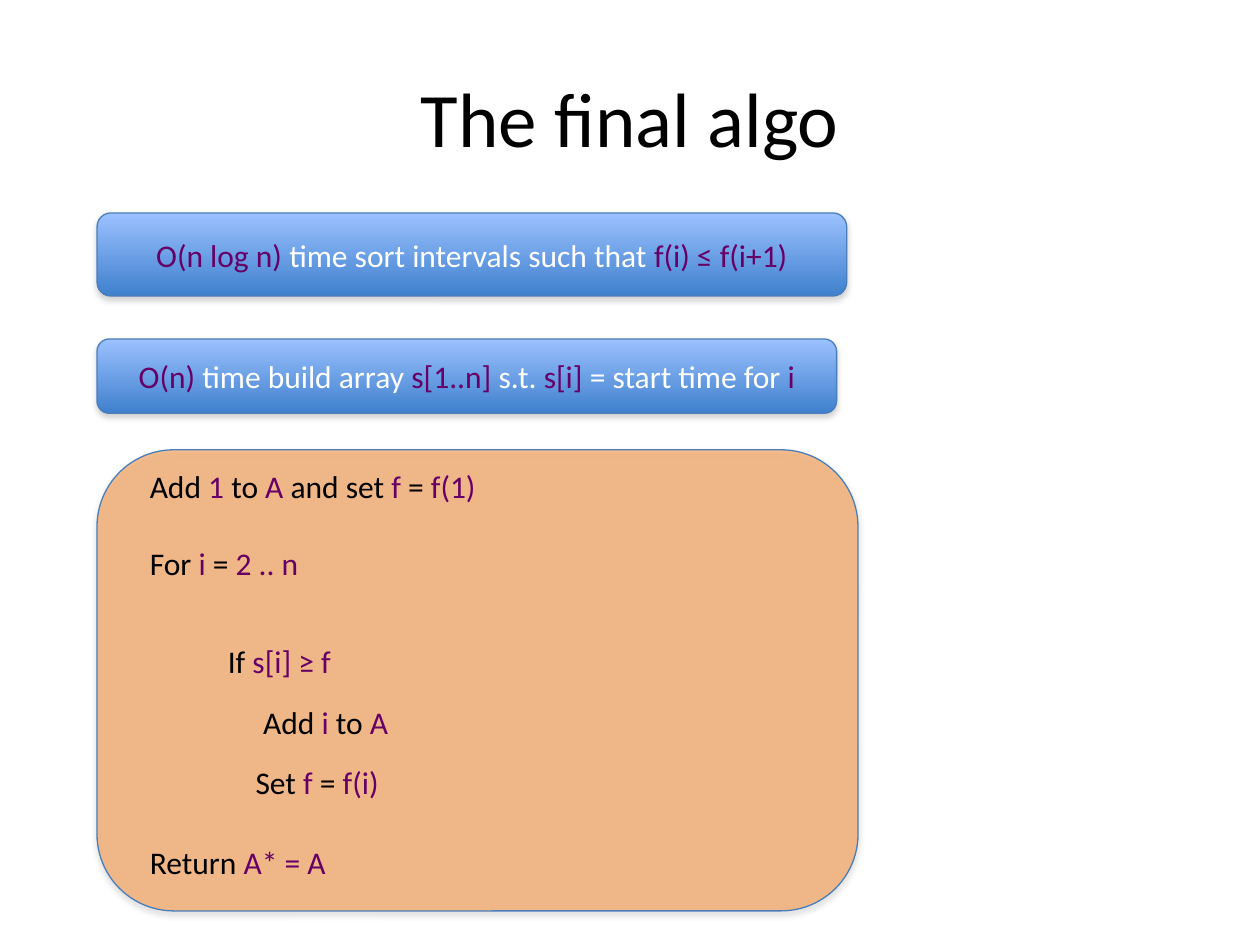
import lxml.etree
import pptx
import pptx.dml.color
import pptx.enum.shapes
import pptx.enum.text
import pptx.oxml.ns
import pptx.util

Inches = pptx.util.Inches
ANCHOR = pptx.enum.text.MSO_ANCHOR
ALIGN = pptx.enum.text.PP_ALIGN

BLACK, WHITE, PURPLE = "000000", "FFFFFF", "660066"
ORANGE, BORDER, SHADOW = "F79646", "4A7EBB", "808080"
BLUE_GRADIENT = ("9BC1FF", "3F80CD")
LEFT = 0.77

# Text between bars is a formula and is set in purple
PREPARATION_STEPS = [
    (1.69, 5.95, 0.66, "|O(n log n) |time sort intervals such that |f(i) ≤ f(i+1)"),
    (2.69, 5.87, 0.59, "|O(n) |time build array |s[1..n] |s.t. |s[i]| = start time for |i"),
]
ALGORITHM_LINES = [
    (1.09, 3.66, 2.81, "Add |1| to |A| and set |f| = |f(1)"),
    (1.09, 4.27, 1.39, "For |i| = |2 .. n"),
    (1.71, 5.05, 1.03, "If |s[i] ≥ f"),
    (1.99, 5.53, 1.21, "Add |i| to |A"),
    (1.93, 6.01, 1.2, "Set |f |= |f(i)"),
    (1.09, 6.64, 1.61, "Return |A* = A"),
]


def color(value):
    return pptx.dml.color.RGBColor.from_string(value)


def set_attributes(target, values):
    for name, value in values.items():
        setattr(target, name, value)


def write_text(paragraph, marked_text, base_color, size=18):
    for index, part in enumerate(marked_text.split("|")):
        if part:
            run = paragraph.add_run()
            run.text = part
            set_attributes(run.font, {"name": "Calibri", "size": pptx.util.Pt(size)})
            run.font.color.rgb = color(PURPLE if index % 2 else base_color)


def add_child(parent, tag, **attributes):
    return lxml.etree.SubElement(parent, pptx.oxml.ns.qn(tag), attributes)


def add_shadow(shape):
    shape.shadow.inherit = False
    effects = shape._element.spPr.find(pptx.oxml.ns.qn("a:effectLst"))
    shadow = add_child(effects, "a:outerShdw", blurRad="40000", dist="23000",
                       dir="5400000", rotWithShape="0")
    shade = add_child(shadow, "a:srgbClr", val=SHADOW)
    add_child(shade, "a:alpha", val="35000")


def add_rounded_box(shapes, top, width, height):
    shape = shapes.add_shape(
        pptx.enum.shapes.MSO_SHAPE.ROUNDED_RECTANGLE,
        Inches(LEFT), Inches(top), Inches(width), Inches(height))
    shape.line.color.rgb = color(BORDER)
    shape.line.width = pptx.util.Pt(0.75)
    add_shadow(shape)
    return shape


def add_step(shapes, top, width, height, marked_text):
    shape = add_rounded_box(shapes, top, width, height)
    shape.fill.gradient()
    shape.fill.gradient_angle = 270
    for stop, value in zip(shape.fill.gradient_stops, BLUE_GRADIENT):
        stop.color.rgb = color(value)
    shape.text_frame.vertical_anchor = ANCHOR.MIDDLE
    paragraph = shape.text_frame.paragraphs[0]
    paragraph.alignment = ALIGN.CENTER
    write_text(paragraph, marked_text, WHITE)


def add_panel(shapes):
    panel = add_rounded_box(shapes, 3.57, 6.04, 3.66)
    panel.fill.solid()
    panel.fill.fore_color.rgb = color(ORANGE)
    fill_color = panel._element.spPr.find(
        pptx.oxml.ns.qn("a:solidFill")).find(pptx.oxml.ns.qn("a:srgbClr"))
    add_child(fill_color, "a:alpha", val="59000")


def add_line(shapes, left, top, width, marked_text):
    box = shapes.add_textbox(Inches(left), Inches(top), Inches(width), Inches(0.4))
    set_attributes(box.text_frame, {
        "word_wrap": False,
        "auto_size": pptx.enum.text.MSO_AUTO_SIZE.SHAPE_TO_FIT_TEXT,
    })
    write_text(box.text_frame.paragraphs[0], marked_text, BLACK)


def add_title(slide, text):
    title = slide.shapes.title
    set_attributes(title, {"left": Inches(0.5), "top": Inches(0.3),
                           "width": Inches(9), "height": Inches(1.25)})
    title.text_frame.vertical_anchor = ANCHOR.MIDDLE
    paragraph = title.text_frame.paragraphs[0]
    paragraph.alignment = ALIGN.CENTER
    write_text(paragraph, text, BLACK, size=44)


def main():
    presentation = pptx.Presentation()
    set_attributes(presentation, {"slide_width": Inches(10), "slide_height": Inches(7.5)})
    slide = presentation.slides.add_slide(presentation.slide_layouts[5])
    add_title(slide, "The final algo")

    # Main loop of the algorithm
    algorithm = slide.shapes.add_group_shape()
    add_panel(algorithm.shapes)
    for line in ALGORITHM_LINES:
        add_line(algorithm.shapes, *line)

    # Preparation before the loop
    for step in PREPARATION_STEPS:
        add_step(slide.shapes, *step)

    presentation.save("out.pptx")


if __name__ == "__main__":
    main()
